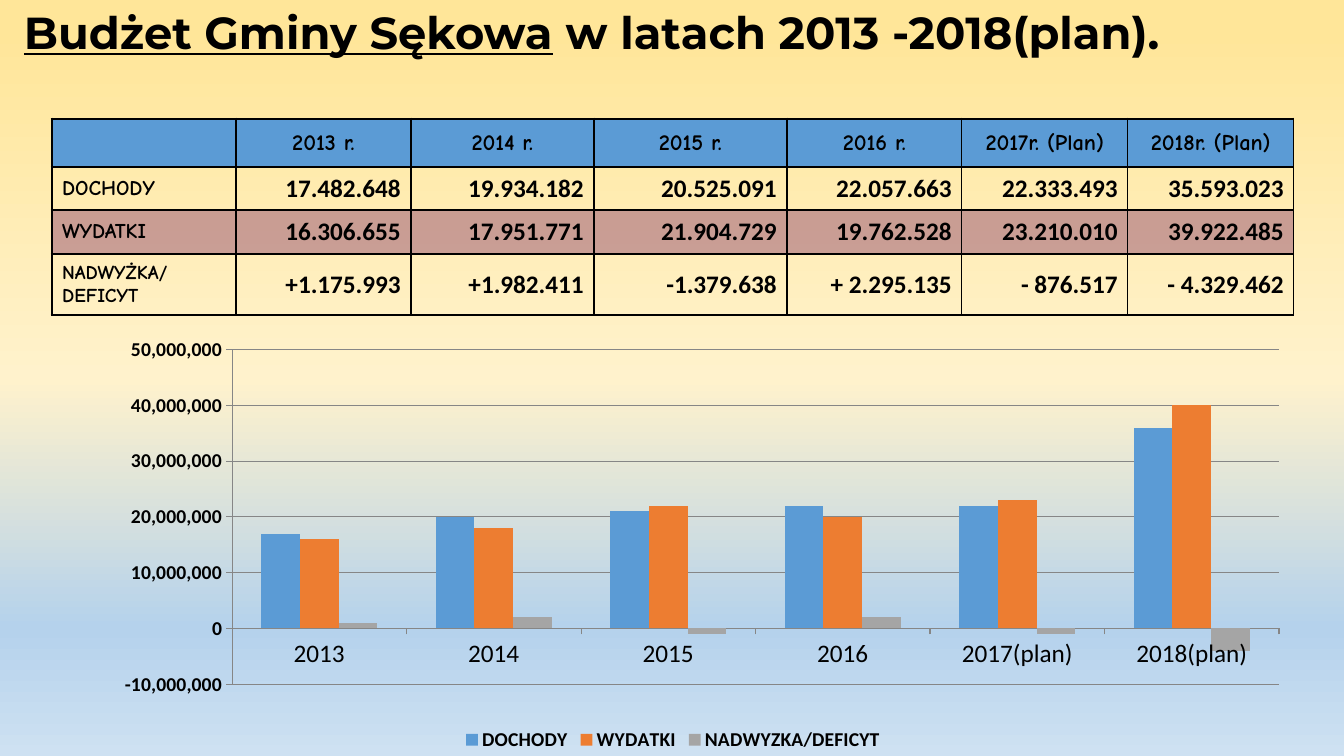
from lxml import etree
from pptx import Presentation
from pptx import util as u
from pptx.chart.data import CategoryChartData
from pptx.dml.color import RGBColor
from pptx.enum import chart as charts, text
from pptx.oxml import parse_xml
from pptx.oxml.ns import nsdecls, qn

PX = 914400 / 100.8
BLACK, BLUE, ORANGE, GRAY, PLUM = "000000", "5B9BD5", "ED7D31", "A5A5A5", "954F72"

YEARS = ["2013 r.", "2014 r.", "2015 r.", "2016 r.", "2017r. (Plan)", "2018r. (Plan)"]
CATEGORIES = ["2013", "2014", "2015", "2016", "2017(plan)", "2018(plan)"]
# label, label size, amounts
BUDGET = [
    ("DOCHODY", 15, ["17.482.648", "19.934.182", "20.525.091",
                     "22.057.663", "22.333.493", "35.593.023"]),
    ("WYDATKI", 15, ["16.306.655", "17.951.771", "21.904.729",
                     "19.762.528", "23.210.010", "39.922.485"]),
    ("NADWYŻKA/ DEFICYT", 14, ["+1.175.993", "+1.982.411", "-1.379.638",
                               "+ 2.295.135", "- 876.517", "- 4.329.462"]),
]
SERIES = [("DOCHODY", BLUE), ("WYDATKI", ORANGE), ("NADWYZKA/DEFICYT", GRAY)]


def px(*lengths):
    return [u.Emu(round(length * PX)) for length in lengths]


def color(hex_code):
    return RGBColor.from_string(hex_code)


def to_millions(figure):
    """Turn a table figure such as '- 876.517' into a number in whole millions."""
    return round(int(figure.replace(".", "").replace(" ", "")), -6)


class BudgetSlide:
    def __init__(self, deck):
        self.page = deck.slides.add_slide(deck.slide_layouts[6])
        self.heading, self.label, self.figure = "Montserrat", "Comic Neue", "Calibri"

    def style(self, font, name, size, bold=True):
        font.name, font.size, font.bold = name, u.Pt(size), bold
        font.color.rgb = color(BLACK)

    def background(self, stops):
        fill = self.page.background.fill
        fill.gradient()
        fill.gradient_angle = 270
        stop_list = self.page.background._cSld.find(".//" + qn("a:gsLst"))
        stop_list.clear()
        for percent, hex_code in stops:
            stop = etree.SubElement(stop_list, qn("a:gs"), pos=str(percent * 1000))
            etree.SubElement(stop, qn("a:srgbClr"), val=hex_code)

    def title(self, frame, spans):
        box = self.page.shapes.add_textbox(*px(*frame))
        box.text_frame.word_wrap = True
        para = box.text_frame.paragraphs[0]
        self.style(para.font, self.heading, 32)
        for words, underline in spans:
            span = para.add_run()
            span.text = words
            span.font.underline = underline

    def borders(self, cell, left, top):
        for side, points in (("L", left), ("R", 1), ("T", top), ("B", 1)):
            cell._tc.get_or_add_tcPr().append(parse_xml(
                f'<a:ln{side} {nsdecls("a")} w="{u.Pt(points)}"><a:solidFill>'
                f'<a:srgbClr val="{BLACK}"/></a:solidFill></a:ln{side}>'))

    def cell(self, cell, words, font_name, size, align):
        cell.vertical_anchor = text.MSO_ANCHOR.MIDDLE
        para = cell.text_frame.paragraphs[0]
        para.text, para.alignment = words, align
        self.style(para.font, font_name, size)

    def shade(self, cell, hex_code, opacity=100):
        cell.fill.solid()
        cell.fill.fore_color.rgb = color(hex_code)
        if opacity < 100:
            shade = cell._tc.tcPr.find(qn("a:solidFill"))[0]
            etree.SubElement(shade, qn("a:alpha"), val=str(opacity * 1000))

    def table(self, left, top, widths, heights):
        frame = self.page.shapes.add_table(
            len(heights), len(widths), *px(left, top, sum(widths), sum(heights)))
        table = frame.table
        table.first_row = table.horz_banding = False
        for column, width in zip(table.columns, px(*widths)):
            column.width = width
        for row, height in zip(table.rows, px(*heights)):
            row.height = height

        align = text.PP_ALIGN
        for c, year in enumerate([""] + YEARS):
            self.cell(table.cell(0, c), year, self.label, 16, align.CENTER)
        for r, (name, size, figures) in enumerate(BUDGET, 1):
            self.cell(table.cell(r, 0), name, self.label, size, align.LEFT)
            for c, figure in enumerate(figures, 1):
                self.cell(table.cell(r, c), figure, self.figure, 18, align.RIGHT)

        for r in range(len(heights)):
            for c in range(len(widths)):
                cell = table.cell(r, c)
                self.borders(cell, 1 if c else 2.25, 1 if r else 2.25)
                if r == 0:
                    self.shade(cell, BLUE)
                elif r == 2:
                    self.shade(cell, PLUM, 50)
                else:
                    cell.fill.background()

    def chart(self, frame):
        data = CategoryChartData(number_format="#,##0")
        data.categories = CATEGORIES
        for (name, _), (_, _, figures) in zip(SERIES, BUDGET):
            data.add_series(name, [to_millions(figure) for figure in figures])
        chart = self.page.shapes.add_chart(
            charts.XL_CHART_TYPE.COLUMN_CLUSTERED, *px(*frame), data).chart
        self.style(chart.font, self.figure, 18, False)
        chart.has_title = False

        chart.has_legend = True
        chart.legend.position = charts.XL_LEGEND_POSITION.BOTTOM
        chart.legend.include_in_layout = False
        self.style(chart.legend.font, self.figure, 14)

        plot = chart.plots[0]
        plot.gap_width, plot.overlap, plot.vary_by_categories = 150, 0, False
        for series, (_, hex_code) in zip(plot.series, SERIES):
            series.invert_if_negative = False
            series.format.fill.solid()
            series.format.fill.fore_color.rgb = color(hex_code)

        values = chart.value_axis
        values.minimum_scale, values.maximum_scale = -10_000_000, 50_000_000
        values.major_unit = 10_000_000
        values.tick_labels.number_format = "#,##0"
        values.tick_labels.number_format_is_linked = False
        self.style(values.tick_labels.font, self.figure, 14)
        values.has_major_gridlines = True
        for axis in (values, chart.category_axis):
            axis.major_tick_mark = charts.XL_TICK_MARK.OUTSIDE
        for lines in (values, chart.category_axis, values.major_gridlines):
            lines.format.line.color.rgb = color("868686")
            lines.format.line.width = u.Pt(0.75)
        self.place_plot(chart, x=0.145, y=0.046, w=0.843, h=0.786)

    def place_plot(self, chart, **shares):
        """Fix the inner plot area as shares of the chart's frame."""
        area = chart._chartSpace.chart.plotArea
        for old in area.findall(qn("c:layout")):
            area.remove(old)
        modes = '<c:xMode val="edge"/><c:yMode val="edge"/>'
        sizes = "".join(f'<c:{key} val="{share}"/>' for key, share in shares.items())
        area.insert(0, parse_xml(
            f'<c:layout {nsdecls("c")}><c:manualLayout><c:layoutTarget val="inner"/>'
            f'{modes}{sizes}</c:manualLayout></c:layout>'))


def main():
    deck = Presentation()
    deck.slide_width, deck.slide_height = px(1344, 756)
    slide = BudgetSlide(deck)
    slide.background([(4, "FFE699"), (50, "FFF2CC"), (83, "B5D2EC"), (100, "CEE1F2")])
    slide.title((14, 0, 1330, 64),
                [("Budżet Gminy Sękowa", True), (" w latach 2013 -2018(plan).", False)])
    slide.table(52, 119, [184, 175, 183, 193, 175, 166, 166], [48, 43, 44, 61])
    slide.chart((52, 330, 1242, 426))
    deck.save("out.pptx")


if __name__ == "__main__":
    main()
